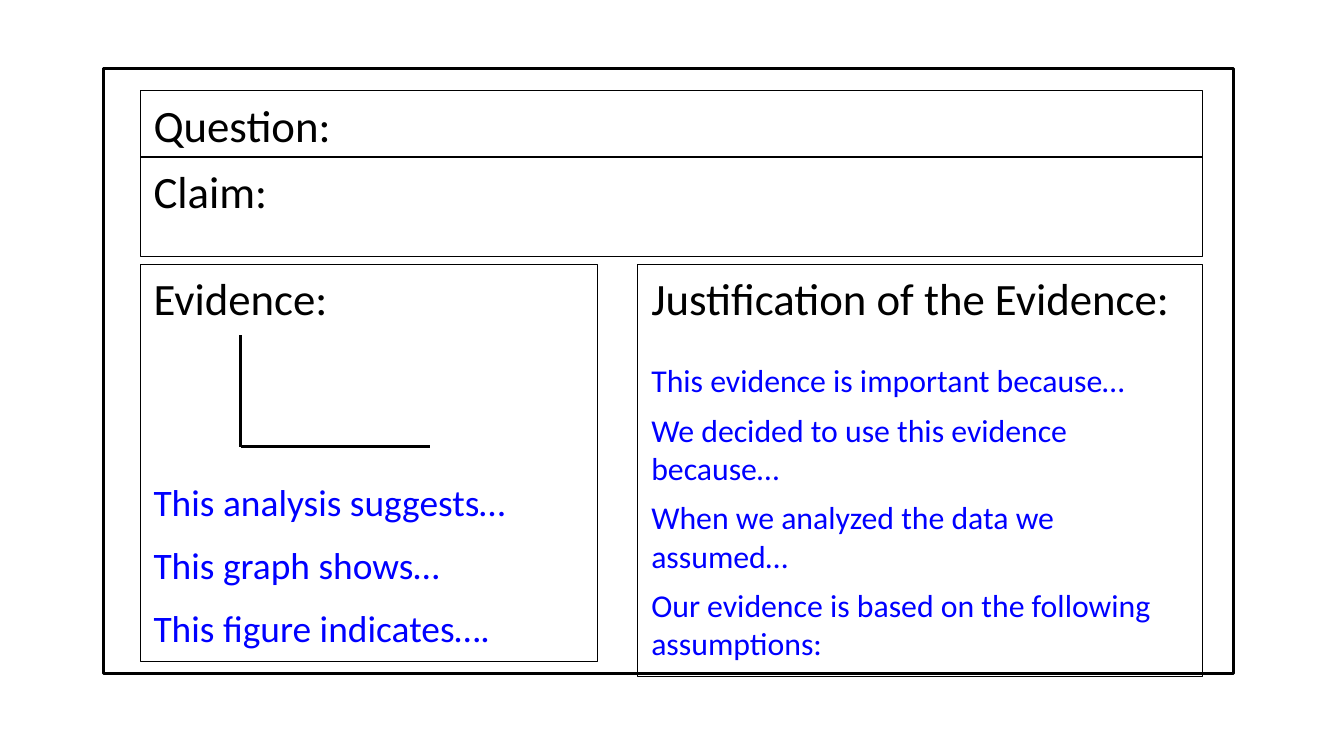
from lxml import etree
from pptx import Presentation
from pptx.dml.color import RGBColor
from pptx.enum.shapes import MSO_CONNECTOR, MSO_SHAPE
from pptx.enum.text import MSO_ANCHOR, PP_ALIGN
from pptx.oxml.ns import qn
from pptx.util import Pt

RECTANGLE = MSO_SHAPE.RECTANGLE
STRAIGHT = MSO_CONNECTOR.STRAIGHT
TOP = MSO_ANCHOR.TOP
LEFT = PP_ALIGN.LEFT

BLACK = RGBColor(0, 0, 0)
WHITE = RGBColor(255, 255, 255)
BLUE = RGBColor(0, 0, 255)
FONT = "Calibri"
HEADING_SIZE = 32

# Regions as left, top, width, height in points
BOARD = (74.2, 49, 807, 432)
QUESTION = (100.1, 64.8, 758.9, 48)
CLAIM = (100.1, 111.9, 758.9, 71.3)
EVIDENCE = (100.1, 188.7, 326.5, 283.6)
JUSTIFICATION = (455.6, 188.7, 403.4, 294.5)

EVIDENCE_STARTERS = [
    "This analysis suggests…",
    "This graph shows…",
    "This figure indicates….",
]
JUSTIFICATION_STARTERS = [
    "This evidence is important because…",
    "We decided to use this evidence because…",
    "When we analyzed the data we assumed…",
    "Our evidence is based on the following assumptions:",
]


def add_frame(page, box, line_width):
    frame = page.shapes.add_shape(RECTANGLE, *(Pt(length) for length in box))
    frame.shadow.inherit = False
    frame.fill.background()
    frame.line.color.rgb = BLACK
    frame.line.width = Pt(line_width)
    return frame


def format_paragraph(paragraph, size, color, space_before=0):
    paragraph.alignment = LEFT
    if space_before:
        paragraph.space_before = Pt(space_before)
    for span in paragraph.runs:
        span.font.name = FONT
        span.font.size = Pt(size)
        span.font.color.rgb = color


def add_section(page, box, heading, starters=(), size=0, first_gap=0, gap=0):
    """Add a bordered section with a heading and blue sentence starters."""
    text_frame = add_frame(page, box, 0.75).text_frame
    text_frame.word_wrap = True
    text_frame.vertical_anchor = TOP
    text_frame.margin_left = text_frame.margin_right = Pt(9.6)
    text_frame.margin_top = text_frame.margin_bottom = Pt(4.8)
    text_frame.text = heading
    format_paragraph(text_frame.paragraphs[0], HEADING_SIZE, BLACK)
    for index, starter in enumerate(starters):
        paragraph = text_frame.add_paragraph()
        paragraph.text = starter
        format_paragraph(paragraph, size, BLUE, gap if index else first_gap)


def add_graph_axes(page, box):
    """Add two empty graph axes inside the evidence section."""
    left, top = box[0] + 72, box[1] + 50.3
    right, bottom = left + 135, top + 80
    for end_x, end_y in ((left, top), (right, bottom)):
        axis = page.shapes.add_connector(
            STRAIGHT, Pt(left), Pt(bottom), Pt(end_x), Pt(end_y))
        axis.line.color.rgb = BLACK
        axis.line.width = Pt(2.25)
        etree.SubElement(axis._element.spPr, qn("a:effectLst"))


def main():
    deck = Presentation()
    deck.slide_width, deck.slide_height = Pt(960), Pt(540)
    page = deck.slides.add_slide(deck.slide_layouts[6])

    # Whiteboard
    board = add_frame(page, BOARD, 2)
    board.fill.solid()
    board.fill.fore_color.rgb = WHITE

    # Sections
    add_section(page, QUESTION, "Question:")
    add_section(page, CLAIM, "Claim:")
    add_section(page, EVIDENCE, "Evidence:", EVIDENCE_STARTERS,
                size=26.7, first_gap=110.5, gap=13)
    add_section(page, JUSTIFICATION, "Justification of the Evidence:",
                JUSTIFICATION_STARTERS, size=22.7, first_gap=26, gap=8.1)
    add_graph_axes(page, EVIDENCE)

    deck.save("out.pptx")


if __name__ == "__main__":
    main()
